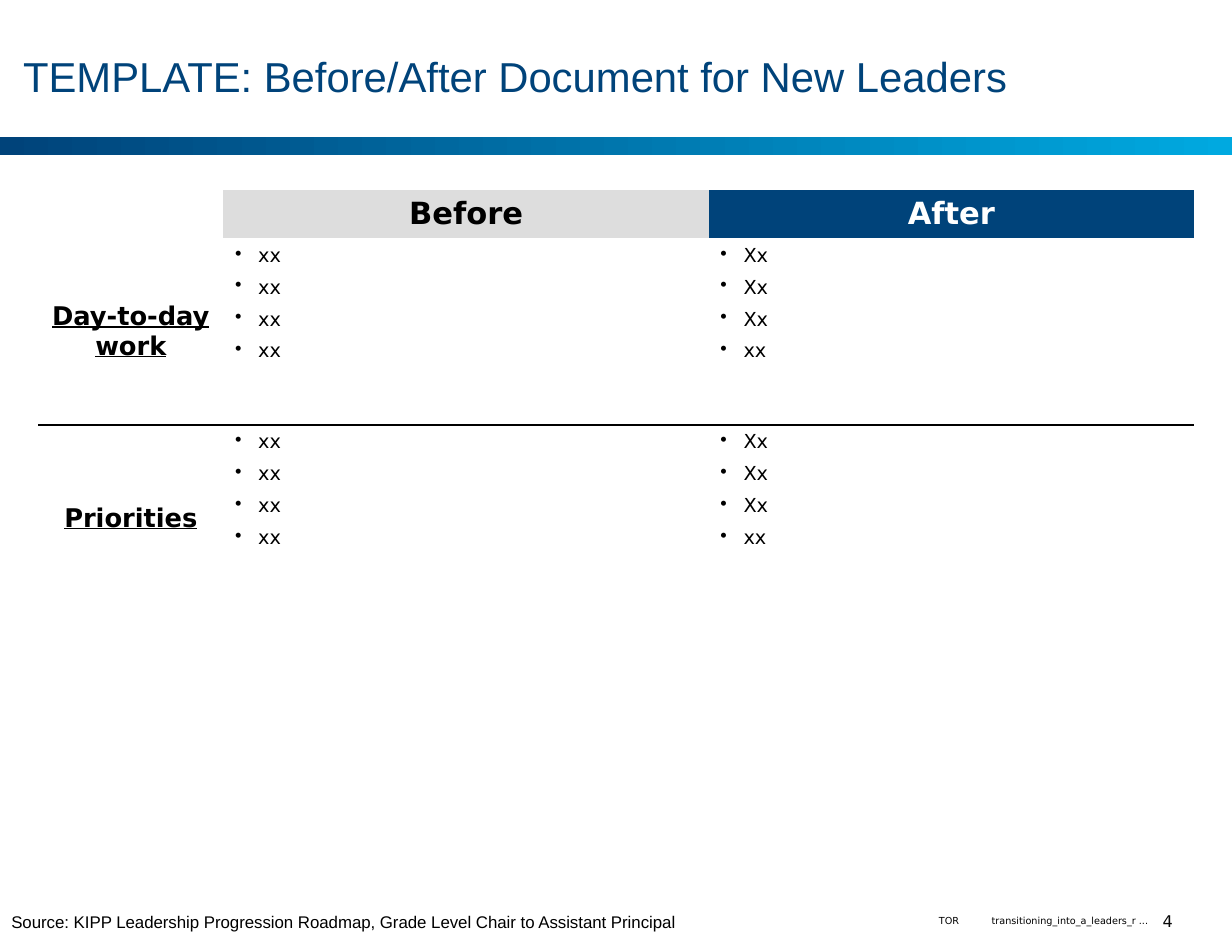
from lxml import etree
from pptx import Presentation
from pptx.dml.color import RGBColor
from pptx.enum.shapes import MSO_SHAPE
from pptx.enum.text import MSO_ANCHOR, PP_ALIGN
from pptx.oxml.ns import qn
from pptx.util import Pt

RECT = MSO_SHAPE.RECTANGLE
TOP, MIDDLE = MSO_ANCHOR.TOP, MSO_ANCHOR.MIDDLE
LEFT, CENTER, RIGHT = PP_ALIGN.LEFT, PP_ALIGN.CENTER, PP_ALIGN.RIGHT

BLACK = RGBColor(0, 0, 0)
INK = RGBColor(0x08, 0x08, 0x08)
WHITE = RGBColor(0xFF, 0xFF, 0xFF)
GREY = RGBColor(0xDD, 0xDD, 0xDD)
NAVY = RGBColor(0x00, 0x43, 0x7A)
SKY = RGBColor(0x00, 0xA9, 0xE0)

WIDTH, HEIGHT = 766.08, 586.08
SANS, DEJAVU = "Arial", "DejaVu Sans"
PLAIN_GRID = "{2D5ABB26-0587-4C30-8999-92F81FD0307C}"

TITLE = {"name": SANS, "size": Pt(26)}
SOURCE = {"name": SANS, "size": Pt(10.5)}
SMALL = {"name": DEJAVU, "size": Pt(6)}
PAGE = {"name": DEJAVU, "size": Pt(10)}
HEAD = {"name": DEJAVU, "size": Pt(19), "bold": True}
LABEL = {"name": DEJAVU, "size": Pt(16), "bold": True, "underline": True}
ITEM = {"name": DEJAVU, "size": Pt(12)}

HEADS = [("Before", GREY, BLACK), ("After", NAVY, WHITE)]
ROWS = [
    ("Day-to-day work", "b"),
    ("Priorities", "t"),
]
ITEMS = [["xx", "xx", "xx", "xx"], ["Xx", "Xx", "Xx", "xx"]]


def style(font, form, color):
    for key, value in form.items():
        setattr(font, key, value)
    font.color.rgb = color


def put_text(slide, box, words, form, color=BLACK, align=LEFT, anchor=MIDDLE,
             inset=(0, 0, 0, 0), wrap=False):
    """Add a text box; inset runs left, top, right, bottom."""
    frame = slide.shapes.add_textbox(*map(Pt, box)).text_frame
    frame.word_wrap = wrap
    frame.vertical_anchor = anchor
    for side, gap in zip(("left", "top", "right", "bottom"), inset):
        setattr(frame, "margin_" + side, Pt(gap))
    para = frame.paragraphs[0]
    para.text = words
    para.alignment = align
    style(para.font, form, color)


def draw_header(slide, left, top, width):
    put_text(slide, (left + 14.4, top + 11.5, width - 14.4, 71.3),
             "TEMPLATE: Before/After Document for New Leaders",
             TITLE, NAVY, inset=(0, 0, 5.76, 0), wrap=True)
    band = slide.shapes.add_shape(
        RECT, *map(Pt, (left, top + 85, width, 11.5)))
    band.shadow.inherit = False
    band.line.fill.background()
    band.fill.gradient()
    band.fill.gradient_angle = 0
    for stop, color, place in zip(band.fill.gradient_stops, (NAVY, SKY), (0, 1)):
        stop.color.rgb = color
        stop.position = place


def draw_footer(slide, left, top):
    put_text(slide, (left, top, 436.3, 20.2),
             "Source: KIPP Leadership Progression Roadmap, "
             "Grade Level Chair to Assistant Principal",
             SOURCE, anchor=TOP, inset=(7.2, 3.6, 7.2, 3.6))
    base = top + 5.76
    put_text(slide, (left + 580.3, base, 16.6, 7.2), "TOR", SMALL,
             inset=(3.6, 0, 0, 0))
    put_text(slide, (left + 608.4, base, 105.5, 7.2),
             "transitioning_into_a_leaders_r ...", SMALL, align=RIGHT,
             inset=(3.6, 0, 0, 0))
    put_text(slide, (left + 713.5, base, 25.2, 7.2), "4", PAGE, INK, CENTER)


def fill_cell(cell, words, form, color, fill):
    cell.fill.solid()
    cell.fill.fore_color.rgb = fill
    cell.vertical_anchor = MIDDLE
    para = cell.text_frame.paragraphs[0]
    para.text = words
    para.alignment = CENTER
    style(para.font, form, color)


def fill_list(cell, items):
    cell.fill.background()
    frame = cell.text_frame
    frame.text = "\n".join(items)
    for index, para in enumerate(frame.paragraphs):
        props = para._p.get_or_add_pPr()
        props.set("marL", str(Pt(14.4)))
        props.set("indent", str(-Pt(14.4)))
        etree.SubElement(props, qn("a:buChar")).set("char", "•")
        if index:
            para.space_before = Pt(5.8)
        style(para.font, ITEM, BLACK)


def rule_cell(cell, side):
    """Draw a black rule on the top (t) or bottom (b) of a cell."""
    line = etree.Element(qn("a:ln" + side.upper()), w=str(Pt(1)))
    fill = etree.SubElement(line, qn("a:solidFill"))
    etree.SubElement(fill, qn("a:srgbClr")).set("val", str(BLACK))
    cell._tc.get_or_add_tcPr().insert(0, line)


def draw_table(slide, left, top, width):
    label, head, body = 115.2, 29.3, 116
    frame = slide.shapes.add_table(
        1 + len(ROWS), 1 + len(HEADS), Pt(left), Pt(top), Pt(width),
        Pt(head + body * len(ROWS)))
    table = frame.table
    table._tbl.tblPr.find(qn("a:tableStyleId")).text = PLAIN_GRID
    table.first_row = table.horz_banding = False
    for index, col in enumerate(table.columns):
        col.width = Pt((width - label) / len(HEADS) if index else label)
    for index, row in enumerate(table.rows):
        row.height = Pt(body if index else head)

    table.cell(0, 0).fill.background()
    for col, (words, fill, color) in enumerate(HEADS, 1):
        fill_cell(table.cell(0, col), words, HEAD, color, fill)
    for row, (words, side) in enumerate(ROWS, 1):
        fill_cell(table.cell(row, 0), words, LABEL, BLACK, WHITE)
        for col, items in enumerate(ITEMS, 1):
            fill_list(table.cell(row, col), items)
        for cell in table.rows[row].cells:
            rule_cell(cell, side)


def main():
    deck = Presentation()
    deck.slide_width, deck.slide_height = Pt(WIDTH), Pt(HEIGHT)
    slide = deck.slides.add_slide(deck.slide_layouts[6])
    draw_header(slide, 0, 0, WIDTH)
    draw_table(slide, 23.76, 118.1, 718.8)
    draw_footer(slide, 0, 563.04)
    deck.save("out.pptx")


if __name__ == "__main__":
    main()
